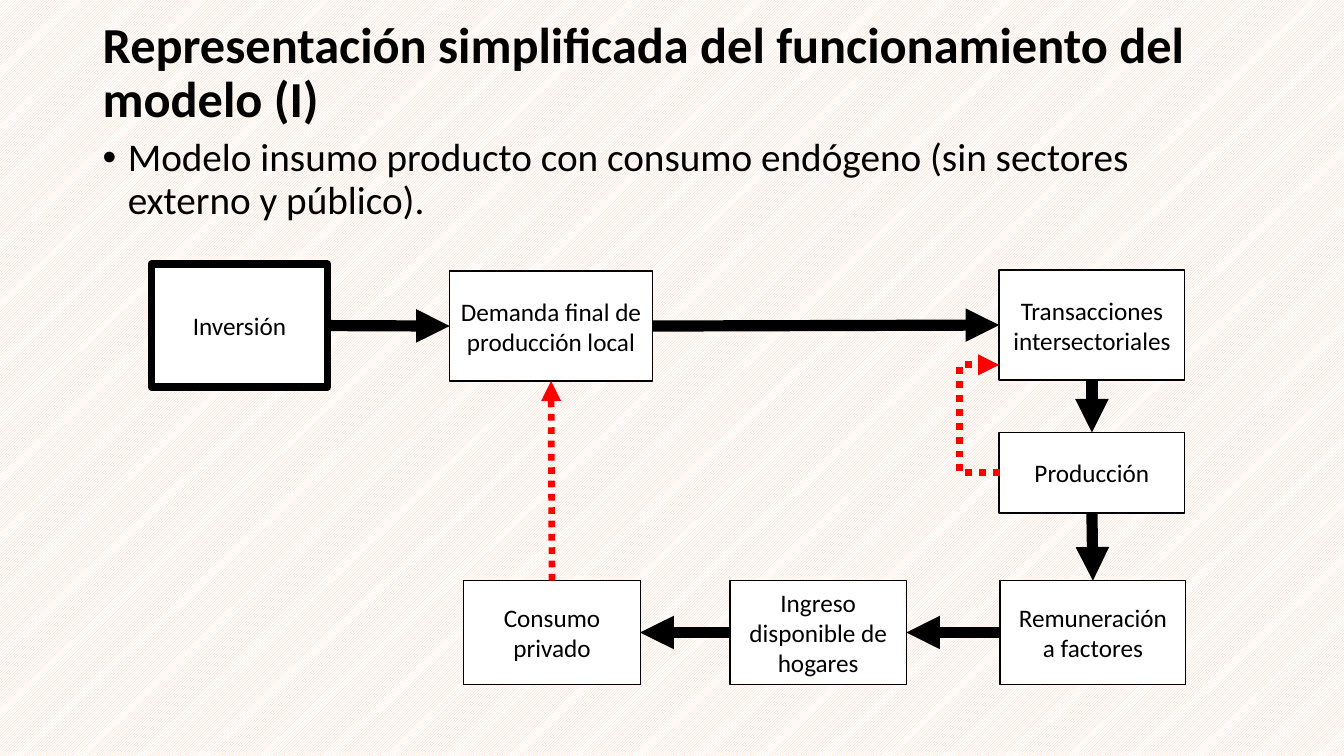
"""Builds the slide with the simplified flow diagram of the input-output model."""
from lxml.etree import SubElement
from pptx import Presentation
from pptx.dml.color import RGBColor
from pptx.enum.dml import MSO_LINE, MSO_PATTERN
from pptx.enum.shapes import MSO_CONNECTOR as CONNECTOR, MSO_SHAPE as SHAPE
from pptx.enum.text import MSO_ANCHOR as ANCHOR, PP_ALIGN as ALIGN
from pptx.oxml.ns import qn
from pptx.util import Pt

PX = 9144
BLACK = RGBColor(0x00, 0x00, 0x00)
WHITE = RGBColor(0xFF, 0xFF, 0xFF)
RED = RGBColor(0xFF, 0x00, 0x00)
PEACH = RGBColor(0xF8, 0xCB, 0xAD)
TOP, LEFT, BOTTOM, RIGHT = range(4)


def write(shape, text, size, bold=False):
    frame = shape.text_frame
    frame.word_wrap = True
    paragraph = frame.paragraphs[0]
    paragraph.text = text
    paragraph.font.name = "Calibri"
    paragraph.font.size = Pt(size)
    paragraph.font.bold = bold
    paragraph.font.color.rgb = BLACK
    return paragraph


def style_arrow(arrow, color, width):
    arrow.line.color.rgb = color
    arrow.line.width = Pt(width)
    if color == RED:
        arrow.line.dash_style = MSO_LINE.ROUND_DOT
        arrow.line._ln.find(qn("a:prstDash")).set("val", "sysDot")
    SubElement(arrow.line._ln, qn("a:tailEnd"), type="triangle")
    SubElement(arrow._element.spPr, qn("a:effectLst"))


presentation = Presentation()
presentation.slide_width = 1333 * PX
presentation.slide_height = 750 * PX
slide = presentation.slides.add_slide(presentation.slide_layouts[6])
background = slide.background.fill
background.patterned()
background.pattern = MSO_PATTERN.LIGHT_UPWARD_DIAGONAL
background.fore_color.rgb = PEACH
background.back_color.rgb = WHITE

title = slide.shapes.add_textbox(92 * PX, 1 * PX, 1150 * PX, 145 * PX)
title.text_frame.vertical_anchor = ANCHOR.MIDDLE
heading = write(title, "Representación simplificada del funcionamiento del modelo (I)", 36, True)
heading.line_spacing = 0.9

body = slide.shapes.add_textbox(92 * PX, 132 * PX, 1150 * PX, 517 * PX)
bullet = write(body, "Modelo insumo producto con consumo endógeno (sin sectores externo y público).", 28)
bullet.line_spacing = 0.9
bullet.space_before = Pt(10)
properties = bullet._p.get_or_add_pPr()
properties.set("marL", str(25 * PX))
properties.set("indent", str(-25 * PX))
bullet_font = SubElement(properties, qn("a:buFont"), typeface="Arial")
bullet_char = SubElement(properties, qn("a:buChar"), char="•")
bullet_font.addnext(bullet_char)
properties.append(properties.find(qn("a:defRPr")))

BOXES = {
    "Inversión": (150, 262, 175, 122, 5.25),
    "Demanda final de producción local": (446, 269, 201, 109, 1),
    "Producción": (991, 429, 184, 80, 1),
    "Transacciones intersectoriales": (991, 268, 184, 109, 1),
    "Remuneración a factores": (992, 576, 184, 103, 1),
    "Ingreso disponible de hogares": (724, 576, 175, 103, 1),
    "Consumo privado": (460, 576, 175, 103, 1),
}
boxes = []
for text, (left, top, width, height, border) in BOXES.items():
    box = slide.shapes.add_shape(SHAPE.RECTANGLE, left * PX, top * PX, width * PX, height * PX)
    box.shadow.inherit = False
    box.fill.solid()
    box.fill.fore_color.rgb = WHITE
    box.line.color.rgb = BLACK
    box.line.width = Pt(border)
    box.text_frame.vertical_anchor = ANCHOR.MIDDLE
    write(box, text, 18).alignment = ALIGN.CENTER
    boxes.append(box)
investment, demand, production, transactions, factors, income, consumption = boxes

FLOWS = [
    (investment, RIGHT, demand, LEFT, BLACK, 8),
    (demand, RIGHT, transactions, LEFT, BLACK, 8),
    (transactions, BOTTOM, production, TOP, BLACK, 8),
    (production, BOTTOM, factors, TOP, BLACK, 8),
    (factors, LEFT, income, RIGHT, BLACK, 8),
    (income, LEFT, consumption, RIGHT, BLACK, 8),
    (consumption, TOP, demand, BOTTOM, RED, 4.75),
]
for source, exit_side, target, entry_side, color, width in FLOWS:
    arrow = slide.shapes.add_connector(CONNECTOR.STRAIGHT, 0, 0, 0, 0)
    arrow.begin_connect(source, exit_side)
    arrow.end_connect(target, entry_side)
    style_arrow(arrow, color, width)

feedback = slide.shapes.add_connector(CONNECTOR.ELBOW, 992 * PX, 469 * PX, 991 * PX, 362 * PX)
guides = feedback._element.spPr.find(qn("a:prstGeom")).get_or_add_avLst()
SubElement(guides, qn("a:gd"), name="adj1", fmla="val 4100000")
style_arrow(feedback, RED, 5)

presentation.save("out.pptx")
